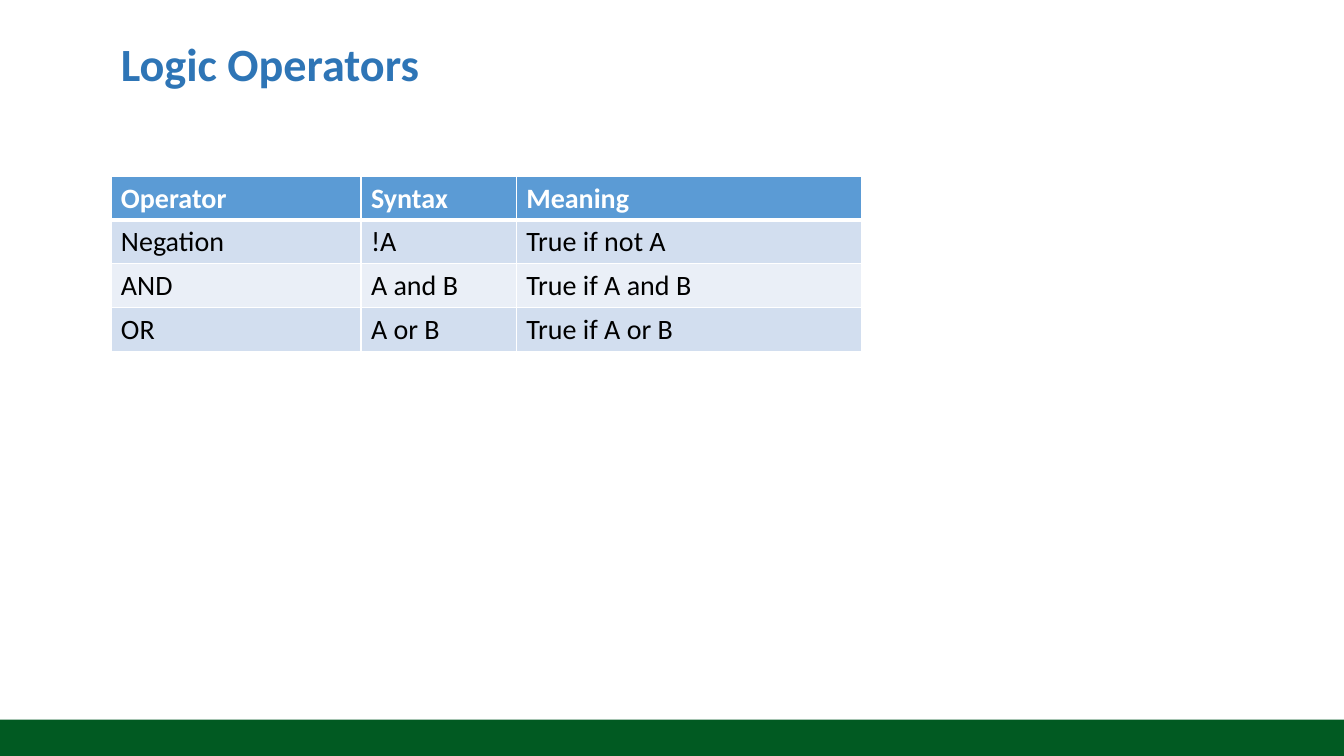
from dataclasses import dataclass

from lxml.etree import SubElement
from pptx import Presentation
from pptx.dml.color import RGBColor
from pptx.enum.shapes import MSO_SHAPE
from pptx.enum.text import MSO_ANCHOR
from pptx.oxml.ns import qn
from pptx.util import Inches, Pt


@dataclass(frozen=True)
class Theme:
    font: str = "Calibri"
    title_size: int = 33
    table_size: int = 20
    title: str = "2E75B6"
    footer: str = "015A22"
    header: str = "5B9BD5"
    bands: tuple = ("D2DEEF", "EAEFF7")
    light: str = "FFFFFF"
    dark: str = "000000"
    grid_line: int = 1
    header_line: int = 3


THEME = Theme()
SLIDE_WIDTH, SLIDE_HEIGHT = 13.33, 7.5
LEFT_MARGIN = 1.1
FOOTER_HEIGHT = 0.36

COLUMN_WIDTHS = (2.48, 1.54, 3.43)
ROW_HEIGHT = 0.43
OPERATORS = (
    ("Operator", "Syntax", "Meaning"),
    ("Negation", "!A", "True if not A"),
    ("AND", "A and B", "True if A and B"),
    ("OR", "A or B", "True if A or B"),
)


def style_text(paragraph, size, color, bold):
    for run in paragraph.runs:
        run.font.name = THEME.font
        run.font.size = Pt(size)
        run.font.bold = bold
        run.font.color.rgb = RGBColor.from_string(color)


def add_footer(slide, left, top, width, height):
    footer = slide.shapes.add_shape(
        MSO_SHAPE.RECTANGLE, Inches(left), Inches(top), Inches(width), Inches(height))
    footer.shadow.inherit = False
    footer.fill.solid()
    footer.fill.fore_color.rgb = RGBColor.from_string(THEME.footer)
    footer.line.fill.background()


def add_title(slide, text, left, top, width, height):
    title = slide.shapes.add_textbox(
        Inches(left), Inches(top), Inches(width), Inches(height))
    text_frame = title.text_frame
    text_frame.word_wrap = True
    text_frame.vertical_anchor = MSO_ANCHOR.MIDDLE
    text_frame.text = text
    paragraph = text_frame.paragraphs[0]
    paragraph.line_spacing = 0.9
    style_text(paragraph, THEME.title_size, THEME.title, True)


def add_borders(cell, top_width, bottom_width):
    properties = cell._tc.get_or_add_tcPr()
    widths = {"L": THEME.grid_line, "R": THEME.grid_line,
              "T": top_width, "B": bottom_width}
    for side, width in widths.items():
        line = SubElement(properties, qn(f"a:ln{side}"), w=str(Pt(width)))
        fill = SubElement(line, qn("a:solidFill"))
        SubElement(fill, qn("a:srgbClr"), val=THEME.light)


def add_operator_table(slide, rows, left, top, column_widths, row_height):
    frame = slide.shapes.add_table(
        len(rows), len(column_widths), Inches(left), Inches(top),
        Inches(sum(column_widths)), Inches(row_height * len(rows)))
    table = frame.table
    for column, width in zip(table.columns, column_widths):
        column.width = Inches(width)

    for row_index, values in enumerate(rows):
        is_header = row_index == 0
        background = THEME.header if is_header else THEME.bands[(row_index - 1) % 2]
        text_color = THEME.light if is_header else THEME.dark
        # The heavy rule lies between the header and the first body row
        top_width = THEME.header_line if row_index == 1 else THEME.grid_line
        bottom_width = THEME.header_line if is_header else THEME.grid_line
        for column_index, value in enumerate(values):
            cell = table.cell(row_index, column_index)
            cell.text_frame.text = value
            style_text(cell.text_frame.paragraphs[0],
                       THEME.table_size, text_color, is_header)
            add_borders(cell, top_width, bottom_width)
            cell.fill.solid()
            cell.fill.fore_color.rgb = RGBColor.from_string(background)


def main():
    presentation = Presentation()
    presentation.slide_width = Inches(SLIDE_WIDTH)
    presentation.slide_height = Inches(SLIDE_HEIGHT)
    slide = presentation.slides.add_slide(presentation.slide_layouts[6])

    # Footer bar, title and table, from back to front
    add_footer(slide, 0, SLIDE_HEIGHT - FOOTER_HEIGHT, SLIDE_WIDTH, FOOTER_HEIGHT)
    add_title(slide, "Logic Operators",
              LEFT_MARGIN, 0.23, SLIDE_WIDTH - LEFT_MARGIN, 0.87)
    add_operator_table(slide, OPERATORS, LEFT_MARGIN, 1.75, COLUMN_WIDTHS, ROW_HEIGHT)

    presentation.save("out.pptx")


if __name__ == "__main__":
    main()
